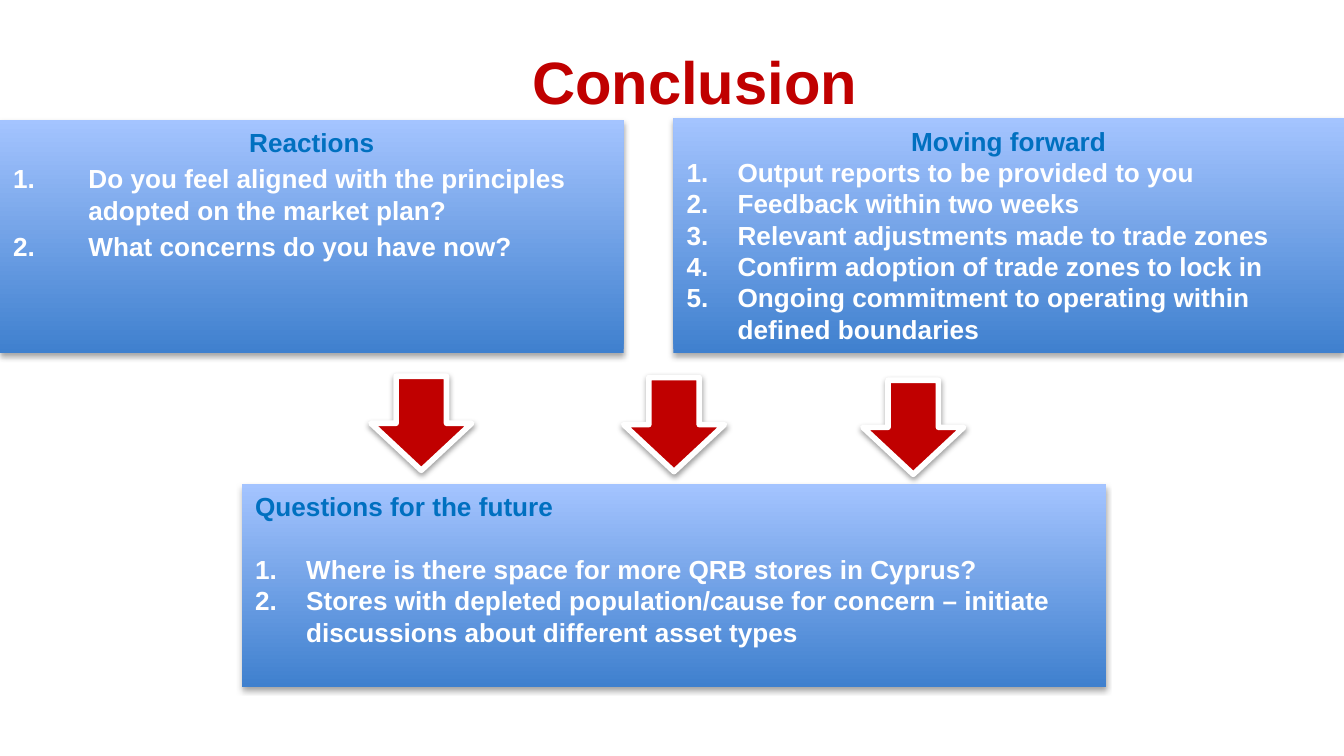
from lxml import etree
from pptx import Presentation
from pptx import util as u
from pptx.dml.color import RGBColor
from pptx.enum import shapes, text
from pptx.oxml import ns

COLORS = {"red": "C00000", "heading": "0070C0", "white": "FFFFFF",
          "bottom": "3F80CE", "top": "A4C4FF", "shadow": "000000"}
FONT = "Arial"


def rgb(name):
    """Return a palette colour."""
    return RGBColor.from_string(COLORS[name])


def add_shadow(sp, distance, opacity):
    """Give a shape a soft shadow that falls straight down."""
    sp.shadow.inherit = False
    effects = sp._element.spPr.find(ns.qn("a:effectLst"))
    shadow = etree.SubElement(effects, ns.qn("a:outerShdw"), blurRad=str(u.Pt(3.1)),
                              dist=str(u.Pt(distance)), dir="5400000", rotWithShape="0")
    color = etree.SubElement(shadow, ns.qn("a:srgbClr"), val=COLORS["shadow"])
    etree.SubElement(color, ns.qn("a:alpha"), val=str(opacity * 1000))


def add_number(p, indent):
    """Number a paragraph with a hanging indent in inches."""
    pPr = p._p.get_or_add_pPr()
    pPr.set("marL", str(u.Inches(indent)))
    pPr.set("indent", str(-u.Inches(indent)))
    etree.SubElement(pPr, ns.qn("a:buFont"), typeface=FONT)
    etree.SubElement(pPr, ns.qn("a:buAutoNum"), type="arabicPeriod")


def add_run(p, words, size, color):
    """Add a bold run."""
    r = p.add_run()
    r.text = words
    r.font.name = FONT
    r.font.size = u.Pt(size)
    r.font.bold = True
    r.font.color.rgb = rgb(color)


def add_title(slide, box, words):
    """Place and format the slide title."""
    sp = slide.shapes.title
    sp.left, sp.top, sp.width, sp.height = map(u.Inches, box)
    tf = sp.text_frame
    tf.vertical_anchor = text.MSO_ANCHOR.MIDDLE
    p = tf.paragraphs[0]
    p.alignment = text.PP_ALIGN.CENTER
    add_run(p, words, 32, "red")


def add_card(slide, box, heading, items, align=text.PP_ALIGN.CENTER,
             indent=0.38, gap=0, first_gap=0):
    """Draw a gradient card with a heading and a numbered list."""
    sp = slide.shapes.add_shape(shapes.MSO_SHAPE.RECTANGLE, *map(u.Inches, box))
    sp.fill.gradient()
    sp.fill.gradient_angle = 90
    for stop, color in zip(sp.fill.gradient_stops, ("bottom", "top")):
        stop.color.rgb = rgb(color)
    sp.line.fill.background()
    add_shadow(sp, 1.8, 35)
    tf = sp.text_frame
    tf.word_wrap = True
    tf.vertical_anchor = text.MSO_ANCHOR.TOP
    p = tf.paragraphs[0]
    p.alignment = align
    add_run(p, heading, 14, "heading")
    for i, item in enumerate(items):
        p = tf.add_paragraph()
        p.alignment = text.PP_ALIGN.LEFT
        p.space_before = u.Pt(gap if i else first_gap)
        add_number(p, indent)
        add_run(p, item, 14, "white")


def add_arrow(slide, left, top):
    """Draw a red down arrow with a white outline."""
    box = map(u.Inches, (left, top, 0.75, 0.7))
    sp = slide.shapes.add_shape(shapes.MSO_SHAPE.DOWN_ARROW, *box)
    sp.fill.solid()
    sp.fill.fore_color.rgb = rgb("red")
    sp.line.color.rgb = rgb("white")
    sp.line.width = u.Pt(3)
    add_shadow(sp, 1.6, 38)


def main():
    """Build the conclusion slide."""
    prs = Presentation()
    prs.slide_width, prs.slide_height = u.Inches(10), u.Inches(10 * 9 / 16)
    slide = prs.slides.add_slide(prs.slide_layouts[5])
    add_title(slide, (0.67, 0.13, 9, 0.94), "Conclusion")
    add_card(slide, (0, 0.89, 4.64, 1.74), "Reactions", [
        "Do you feel aligned with the principles adopted on the market plan?",
        "What concerns do you have now?",
    ], indent=0.56, gap=2.8, first_gap=2.8)
    add_card(slide, (5.01, 0.88, 4.99, 1.75), "Moving forward", [
        "Output reports to be provided to you",
        "Feedback within two weeks",
        "Relevant adjustments made to trade zones",
        "Confirm adoption of trade zones to lock in",
        "Ongoing commitment to operating within defined boundaries",
    ])
    add_card(slide, (1.8, 3.6, 6.43, 1.51), "Questions for the future", [
        "Where is there space for more QRB stores in Cyprus?",
        "Stores with depleted population/cause for concern – initiate "
        "discussions about different asset types",
    ], align=text.PP_ALIGN.LEFT, first_gap=16.8)
    for left, top in ((2.76, 2.8), (4.64, 2.81), (6.42, 2.83)):
        add_arrow(slide, left, top)
    prs.save("out.pptx")


if __name__ == "__main__":
    main()
